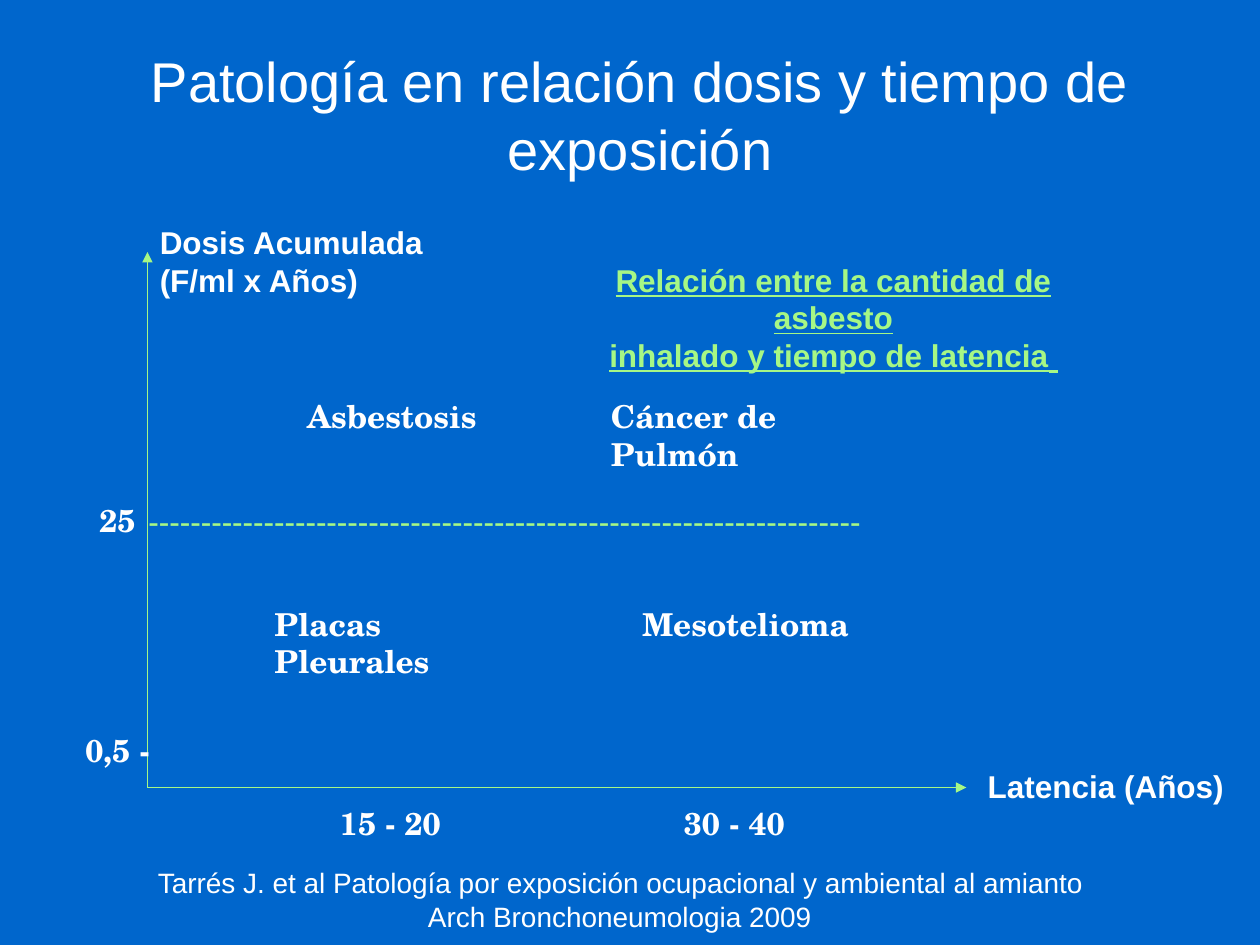
from pptx import Presentation, util as u
from pptx.dml.color import RGBColor
from pptx.enum import shapes, text
from pptx.oxml.ns import qn
from lxml import etree

COLORS = {"background": "0066CC", "text": "FFFFFF", "accent": "A6F785"}
SANS, SERIF = "Arial", "TeX Gyre Schola"
COLUMNS, ROWS = 100, 75


def add_run(paragraph, content, font=SERIF, size=18, color="text", bold=True, underline=False):
    """Add a formatted run of text to a paragraph."""
    run = paragraph.add_run()
    run.text = content
    run.font.name, run.font.size = font, u.Pt(size)
    run.font.bold, run.font.underline = bold, underline
    run.font.color.rgb = RGBColor.from_string(COLORS[color])


class DoseChart:
    """Draws labels and axes on one slide, measured in grid columns and rows."""

    def __init__(self, presentation):
        """Add a blank slide with the background colour."""
        self.column = presentation.slide_width / COLUMNS
        self.row = presentation.slide_height / ROWS
        self.slide = presentation.slides.add_slide(presentation.slide_layouts[6])
        fill = self.slide.background.fill
        fill.solid()
        fill.fore_color.rgb = RGBColor.from_string(COLORS["background"])

    def place(self, column, row):
        """Turn grid units into slide lengths."""
        return u.Emu(round(column * self.column)), u.Emu(round(row * self.row))

    def label(self, lines, left, top, width, height=4, centered=False, middle=False,
              wrap=True, **style):
        """Add a text box with one paragraph for each line."""
        box = self.slide.shapes.add_textbox(*self.place(left, top), *self.place(width, height))
        frame = box.text_frame
        frame.word_wrap = wrap
        if middle:
            frame.vertical_anchor = text.MSO_ANCHOR.MIDDLE
        for index, line in enumerate(lines):
            paragraph = frame.add_paragraph() if index else frame.paragraphs[0]
            paragraph.alignment = text.PP_ALIGN.CENTER if centered else text.PP_ALIGN.LEFT
            add_run(paragraph, line, **style)
        return box

    def axis(self, start, end):
        """Add a thin axis that ends in an arrowhead."""
        line = self.slide.shapes.add_connector(
            shapes.MSO_CONNECTOR.STRAIGHT, *self.place(*start), *self.place(*end))
        line.line.color.rgb = RGBColor.from_string(COLORS["accent"])
        line.line.width = u.Pt(0.75)
        etree.SubElement(line.line._get_or_add_ln(), qn("a:tailEnd"), type="triangle")
        etree.SubElement(line._element.spPr, qn("a:effectLst"))


def main():
    """Build and save the slide."""
    presentation = Presentation()
    presentation.slide_width, presentation.slide_height = u.Inches(10), u.Inches(7.5)
    chart = DoseChart(presentation)

    chart.label(["Patología en relación dosis y tiempo de exposición"], 5.9, 2.8, 89.8, 12.5,
                centered=True, middle=True, font=SANS, size=32, bold=False)

    origin = (11.7, 62.5)
    for end in ((11.7, 20), (76.7, 62.5)):
        chart.axis(origin, end)
    chart.label(["Latencia (Años)"], 77.4, 60.4, 20.8, wrap=False, font=SANS)
    chart.label(["Dosis Acumulada", "(F/ml x Años)"], 11.7, 17.2, 23, 7, wrap=False, font=SANS)

    chart.label(["-" * 68], 10.8, 39.3, 65.8, color="accent", bold=False)
    for lines, left, top, width in (
        (["25"], 6.9, 39.3, 5.1),
        (["0,5 -"], 5.8, 57.5, 7.7),
        (["15 - 20"], 26, 63.3, 10.3),
        (["30 - 40"], 53.3, 63.3, 11),
        (["Asbestosis"], 23.4, 31, 15.6),
        (["Cáncer de", "Pulmón"], 47.5, 31, 25.6),
        (["Placas", "Pleurales"], 20.8, 47.5, 23),
        (["Mesotelioma"], 50, 47.5, 18.7),
    ):
        chart.label(lines, left, top, width)

    heading = chart.label(
        ["Relación entre la cantidad de asbesto", "inhalado y tiempo de latencia"],
        42.8, 20.2, 46.7, 7, centered=True, wrap=False, font=SANS, color="accent", underline=True)
    add_run(heading.text_frame.paragraphs[-1], " ", color="accent", underline=True)

    chart.label(["Tarrés J. et al Patología por exposición ocupacional y ambiental al amianto",
                 " Arch Bronchoneumologia 2009 "],
                11.3, 68.2, 75.9, 6.4, centered=True, font=SANS, size=16, bold=False)
    presentation.save("out.pptx")


if __name__ == "__main__":
    main()
